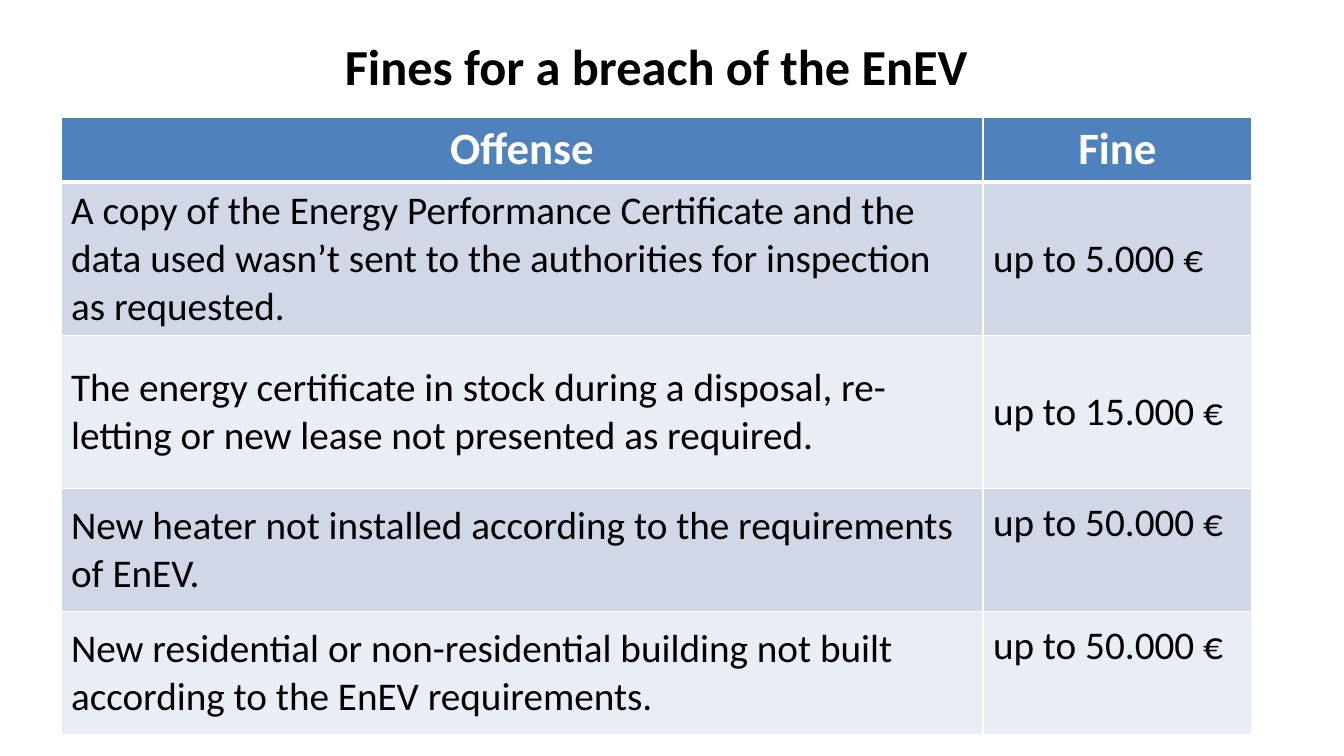
"""Build a slide with a table of fines for breaches of the EnEV."""
from lxml import etree
from pptx import Presentation
from pptx.dml.color import RGBColor
from pptx.enum.text import MSO_ANCHOR, PP_ALIGN
from pptx.oxml.ns import qn
from pptx.util import Pt

TITLE = "Fines for a breach of the EnEV"
HEADER = ("Offense", "Fine")
FINES = [
    ("A copy of the Energy Performance Certificate and the data used wasn’t sent "
     "to the authorities for inspection as requested.", "up to 5.000 €"),
    ("The energy certificate in stock during a disposal, re-letting or new lease "
     "not presented as required.", "up to 15.000 €"),
    ("New heater not installed according to the requirements of EnEV.", "up to 50.000 €"),
    ("New residential or non-residential building not built according to the "
     "EnEV requirements.", "up to 50.000 €"),
]
COLORS = {"white": "FFFFFF", "black": "000000", "header": "4F81BD",
          "band_dark": "D0D8E8", "band_light": "E9EDF4"}
FONT = "Calibri"
SLIDE_SIZE = (1344, 756)
TITLE_BOX = (212, 29, 889, 72)
TABLE_ORIGIN = (61, 117)
COLUMN_WIDTHS = (922, 269)
ROW_HEIGHTS = (64, 153, 153, 123, 123)
RAISED_ROWS = (3, 4)
RAISED_MARGIN = 59
TITLE_ONLY = 5
CENTER, LEFT = PP_ALIGN.CENTER, PP_ALIGN.LEFT
MIDDLE = MSO_ANCHOR.MIDDLE


def px(length):
    return round(length * 914400 / 100.8)


def color(name):
    return RGBColor.from_string(COLORS[name])


def style_text(frame, size, color_name, bold, align):
    para = frame.paragraphs[0]
    para.alignment = align
    font = para.runs[0].font
    font.name, font.size, font.bold = FONT, Pt(size), bold
    font.color.rgb = color(color_name)
    return para


def add_borders(cell, bottom_width):
    properties = cell._tc.get_or_add_tcPr()
    for side, width in (("L", 1), ("R", 1), ("T", 1), ("B", bottom_width)):
        line = etree.SubElement(properties, qn(f"a:ln{side}"), w=str(Pt(width)))
        fill = etree.SubElement(line, qn("a:solidFill"))
        etree.SubElement(fill, qn("a:srgbClr"), val=COLORS["white"])


def add_title(page):
    title = page.shapes.title
    title.left, title.top, title.width, title.height = map(px, TITLE_BOX)
    title.fill.solid()
    title.fill.fore_color.rgb = color("white")
    title.text_frame.text = TITLE
    title.text_frame.vertical_anchor = MIDDLE
    style_text(title.text_frame, 36, "black", True, CENTER)


def fill_cell(cell, text, row, column):
    is_header = row == 0
    add_borders(cell, 3 if is_header else 1)
    cell.fill.solid()
    band = "band_dark" if row % 2 else "band_light"
    cell.fill.fore_color.rgb = color("header" if is_header else band)
    cell.vertical_anchor = MIDDLE
    cell.text_frame.text = text
    if is_header:
        para = style_text(cell.text_frame, 32, "white", True, CENTER)
    else:
        para = style_text(cell.text_frame, 28, "black", False, LEFT)
    if (row, column) != (len(FINES), 0):
        para.space_before = para.space_after = Pt(6)
    if column == 1 and row in RAISED_ROWS:
        cell.margin_bottom = px(RAISED_MARGIN)


def add_fines_table(page):
    rows = [HEADER, *FINES]
    size = (sum(COLUMN_WIDTHS), sum(ROW_HEIGHTS))
    table = page.shapes.add_table(len(rows), len(HEADER),
                                  *map(px, TABLE_ORIGIN + size)).table
    for column, width in zip(table.columns, COLUMN_WIDTHS):
        column.width = px(width)
    for table_row, height in zip(table.rows, ROW_HEIGHTS):
        table_row.height = px(height)
    for row, texts in enumerate(rows):
        for column, text in enumerate(texts):
            fill_cell(table.cell(row, column), text, row, column)


def main():
    deck = Presentation()
    deck.slide_width, deck.slide_height = map(px, SLIDE_SIZE)
    page = deck.slides.add_slide(deck.slide_layouts[TITLE_ONLY])
    add_title(page)
    add_fines_table(page)
    deck.save("out.pptx")


if __name__ == "__main__":
    main()
